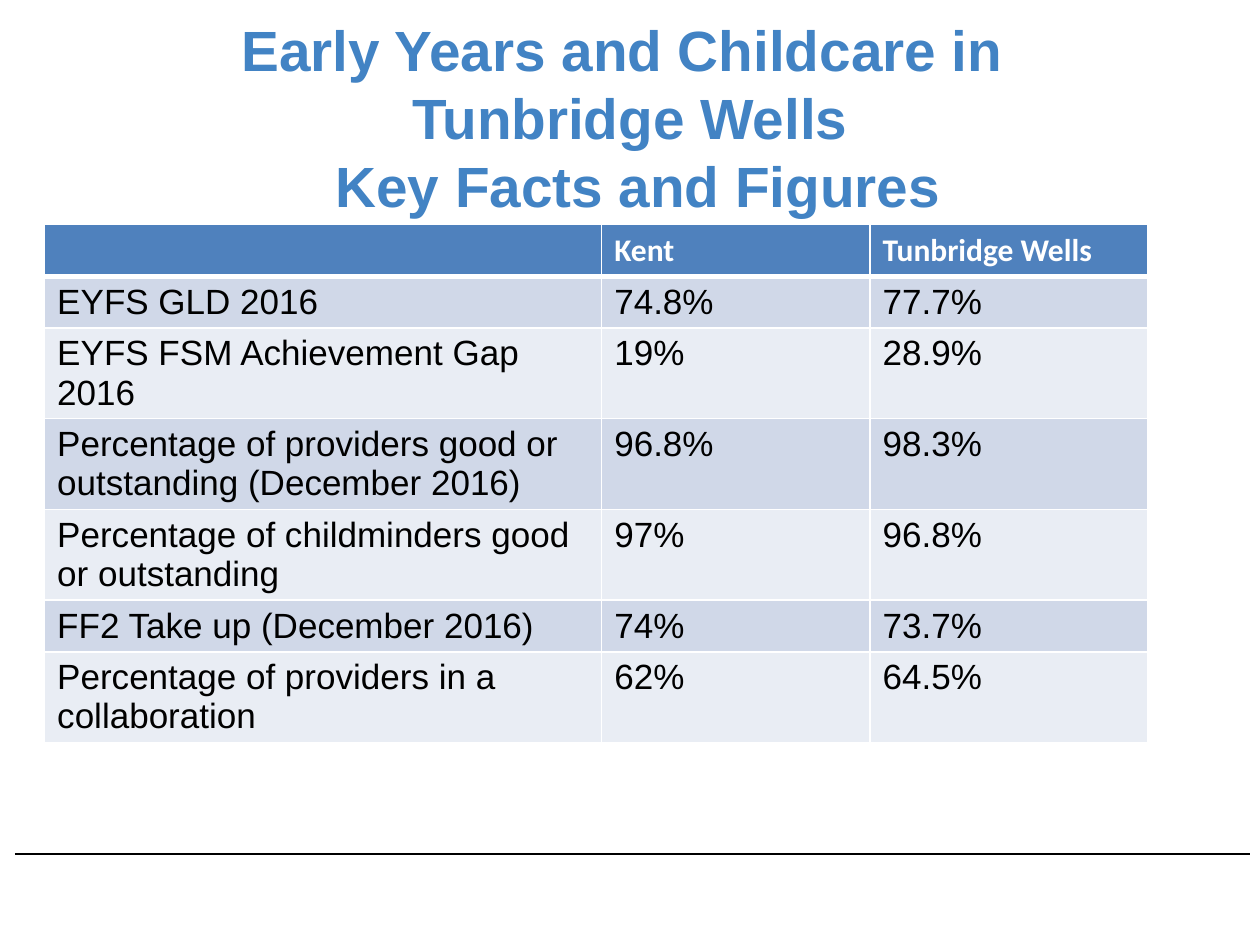
"""Build the Tunbridge Wells early years key facts slide."""
from lxml import etree
from pptx import Presentation
from pptx import util as u
from pptx.dml import color
from pptx.enum import shapes, text
from pptx.oxml import ns

TITLE_LINES = ["Early Years and Childcare in ", "Tunbridge Wells", " Key Facts and Figures"]
TABLE_ROWS = [
    ("", "Kent", "Tunbridge Wells"),
    ("EYFS GLD 2016", "74.8%", "77.7%"),
    ("EYFS FSM Achievement Gap 2016", "19%", "28.9%"),
    ("Percentage of providers good or outstanding (December 2016)", "96.8%", "98.3%"),
    ("Percentage of childminders good or outstanding", "97%", "96.8%"),
    ("FF2 Take up (December 2016)", "74%", "73.7%"),
    ("Percentage of providers in a collaboration", "62%", "64.5%"),
]
COLUMN_WIDTHS = [11.23, 5.41, 5.59]
ROW_HEIGHT = 1.04
HEADER_FILL, BAND_FILLS = "4F81BD", ["D0D8E8", "E9EDF4"]
HEADER_FORMAT = {"size": 18, "name": "Calibri", "colour": "FFFFFF", "bold": True}
BODY_FORMAT = {"size": 20, "name": "Arial", "colour": "000000", "bold": False}
TITLE_FORMAT = {"size": 32.4, "name": "Arial", "colour": "4283C4", "bold": True}


def set_colour(target, value):
    target.rgb = color.RGBColor.from_string(value)


def add_text(paragraph, content, *, size, name, colour, bold):
    run = paragraph.add_run()
    run.text = content
    run.font.size, run.font.name, run.font.bold = u.Pt(size), name, bold
    set_colour(run.font.color, colour)


def set_fill(shape, colour):
    shape.fill.solid()
    set_colour(shape.fill.fore_color, colour)


def add_borders(cell, widths):
    properties = cell._tc.get_or_add_tcPr()
    for side, points in widths.items():
        line = etree.SubElement(properties, ns.qn(f"a:ln{side}"), w=str(u.Pt(points)))
        fill = etree.SubElement(line, ns.qn("a:solidFill"))
        etree.SubElement(fill, ns.qn("a:srgbClr"), val="FFFFFF")


def add_footer_line(slide):
    line = slide.shapes.add_connector(
        shapes.MSO_CONNECTOR.STRAIGHT, u.Cm(0.3), u.Cm(17.22), u.Cm(25.2), u.Cm(17.22))
    line.line.width = u.Pt(1)
    set_colour(line.line.color, "000000")
    etree.SubElement(line._element.spPr, ns.qn("a:effectLst"))


def fill_title(title):
    title.left, title.top, title.width, title.height = map(u.Cm, (1.27, 0.76, 22.86, 3.18))
    frame = title.text_frame
    frame.auto_size = text.MSO_AUTO_SIZE.NONE
    frame.vertical_anchor = text.MSO_ANCHOR.MIDDLE
    paragraph = frame.paragraphs[0]
    paragraph.alignment = text.PP_ALIGN.CENTER
    paragraph.line_spacing = u.Pt(38.9)
    for index, line in enumerate(TITLE_LINES):
        if index:
            paragraph.add_line_break()
        add_text(paragraph, line, **TITLE_FORMAT)


def add_facts_table(slide):
    table = slide.shapes.add_table(
        len(TABLE_ROWS), len(COLUMN_WIDTHS), u.Cm(0.9), u.Cm(4.53),
        u.Cm(sum(COLUMN_WIDTHS)), u.Cm(ROW_HEIGHT * len(TABLE_ROWS))).table
    for column, width in zip(table.columns, COLUMN_WIDTHS):
        column.width = u.Cm(width)
    for row_index, values in enumerate(TABLE_ROWS):
        header = row_index == 0
        table.rows[row_index].height = u.Cm(ROW_HEIGHT)
        for column_index, value in enumerate(values):
            cell = table.cell(row_index, column_index)
            add_borders(cell, {"L": 1, "R": 1, "T": 3 if row_index == 1 else 1,
                               "B": 3 if header else 1})
            set_fill(cell, HEADER_FILL if header else BAND_FILLS[(row_index - 1) % 2])
            if value:
                add_text(cell.text_frame.paragraphs[0], value,
                         **(HEADER_FORMAT if header else BODY_FORMAT))


def main():
    presentation = Presentation()
    presentation.slide_width, presentation.slide_height = u.Cm(25.4), u.Cm(19.05)
    slide = presentation.slides.add_slide(presentation.slide_layouts[5])
    add_footer_line(slide)
    fill_title(slide.shapes.title)
    add_facts_table(slide)
    presentation.save("out.pptx")


if __name__ == "__main__":
    main()
